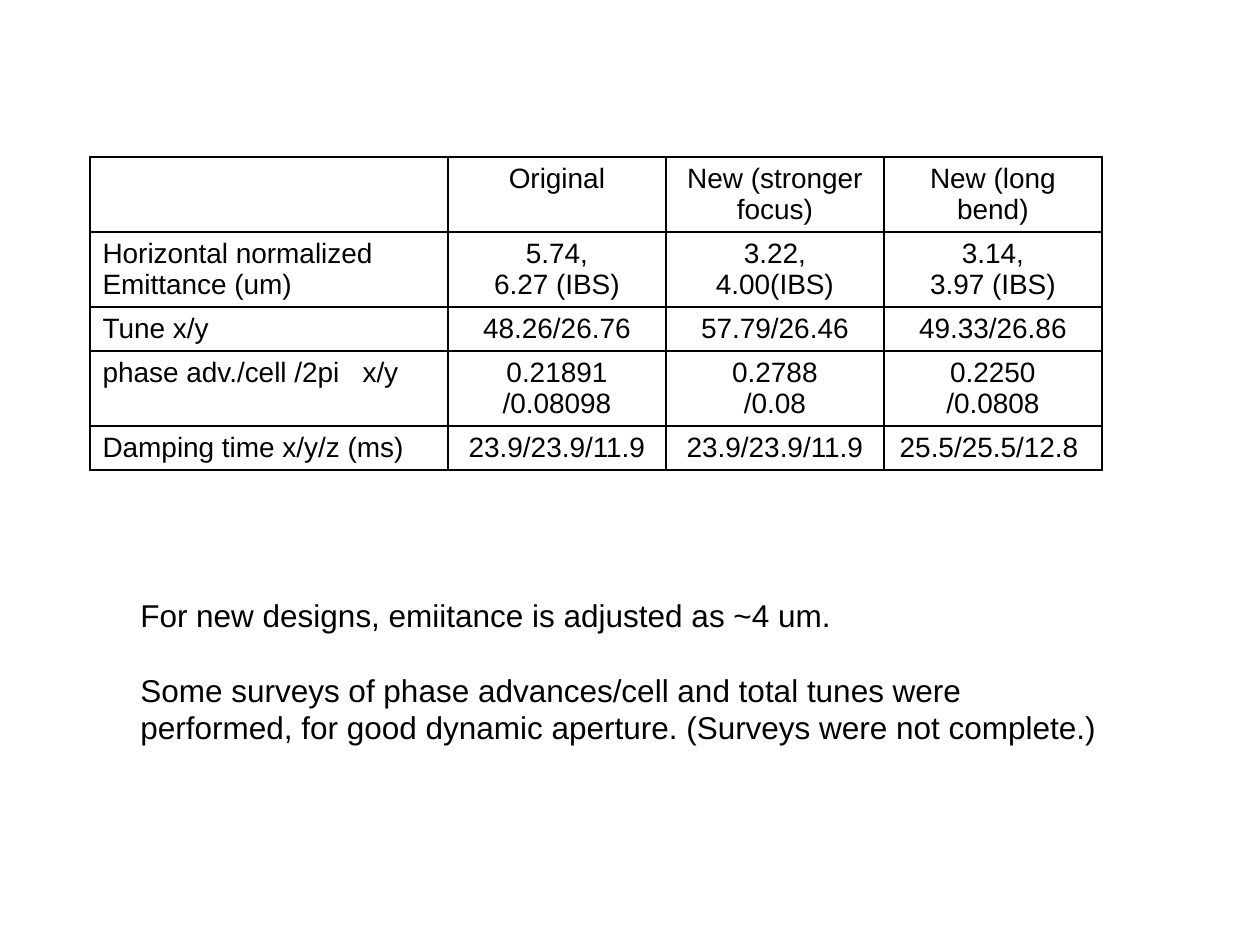
from dataclasses import dataclass

from lxml import etree
from pptx import Presentation
from pptx.dml.color import RGBColor
from pptx.enum.text import MSO_AUTO_SIZE, PP_ALIGN
from pptx.oxml.ns import qn
from pptx.util import Pt

LEFT, MID = PP_ALIGN.LEFT, PP_ALIGN.CENTER
GROW = MSO_AUTO_SIZE.SHAPE_TO_FIT_TEXT
PX = 914400 // 126  # EMU in one px


@dataclass(frozen=True)
class Theme:
    font: str = "Arial"
    ink: str = "000000"
    cell: int = 16
    note: int = 18
    gap: int = 21
    line: int = 1


@dataclass(frozen=True)
class Box:
    x: int
    y: int
    w: int
    h: int

    def emu(self) -> tuple[int, ...]:
        return tuple(n * PX for n in (self.x, self.y, self.w, self.h))


@dataclass(frozen=True)
class Row:
    h: int
    cells: tuple[str, ...]


THEME = Theme()
COLS = (358, 218, 218, 218)
ROWS = (
    Row(75, ("", "Original", "New (stronger focus)", "New (long bend)")),
    Row(75, ("Horizontal normalized Emittance (um)", "5.74,\n6.27 (IBS)",
             "3.22,\n4.00(IBS)", "3.14,\n3.97 (IBS)")),
    Row(44, ("Tune x/y", "48.26/26.76", "57.79/26.46", "49.33/26.86")),
    Row(75, ("phase adv./cell /2pi\tx/y", "0.21891\n/0.08098",
             "0.2788\n/0.08", "0.2250\n/0.0808")),
    Row(44, ("Damping time x/y/z (ms)", "23.9/23.9/11.9",
             "23.9/23.9/11.9", "25.5/25.5/12.8 ")),
)
GRID = Box(90, 157, sum(COLS), sum(row.h for row in ROWS))
TAB = 260  # where "x/y" starts, from the cell's text edge
NOTE = Box(128, 590, 995, 165)
NOTES = (
    "For new designs, emiitance is adjusted as ~4 um.",
    "Some surveys of phase advances/cell and total tunes were "
    "performed, for good dynamic aperture. (Surveys were not complete.)",
)


def write(frame, text: str, size: int, align=LEFT, gap: int = 0) -> None:
    """Fill a text frame, one paragraph a line."""
    frame.text = text
    for par in frame.paragraphs:
        par.alignment = align
        par.space_after = Pt(gap)
        if "\t" in par.text:
            tabs = etree.SubElement(par._p.get_or_add_pPr(), qn("a:tabLst"))
            etree.SubElement(tabs, qn("a:tab"), pos=str(TAB * PX), algn="l")
        par.font.name = THEME.font
        par.font.size = Pt(size)
        par.font.color.rgb = RGBColor.from_string(THEME.ink)


def rule(cell) -> None:
    """Draw a thin line on all four sides of a cell."""
    props = cell._tc.get_or_add_tcPr()
    for i, side in enumerate("LRTB"):
        line = etree.Element(qn(f"a:ln{side}"), w=str(Pt(THEME.line)))
        fill = etree.SubElement(line, qn("a:solidFill"))
        etree.SubElement(fill, qn("a:srgbClr"), val=THEME.ink)
        props.insert(i, line)


def draw_grid(slide) -> None:
    table = slide.shapes.add_table(len(ROWS), len(COLS), *GRID.emu()).table
    table.first_row = table.horz_banding = False
    for col, w in zip(table.columns, COLS):
        col.width = w * PX
    for r, row in enumerate(ROWS):
        table.rows[r].height = row.h * PX
        for c, text in enumerate(row.cells):
            cell = table.cell(r, c)
            write(cell.text_frame, text, THEME.cell, MID if c else LEFT)
            cell.fill.background()
            rule(cell)


def draw_note(slide) -> None:
    frame = slide.shapes.add_textbox(*NOTE.emu()).text_frame
    frame.word_wrap = True
    frame.auto_size = GROW
    write(frame, "\n".join(NOTES), THEME.note, gap=THEME.gap)
    frame.paragraphs[-1].space_after = Pt(0)


def main() -> None:
    deck = Presentation()
    deck.slide_width, deck.slide_height = 1260 * PX, 945 * PX
    slide = deck.slides.add_slide(deck.slide_layouts[6])
    # Table of ring designs
    draw_grid(slide)
    # Remarks below it
    draw_note(slide)
    deck.save("out.pptx")


if __name__ == "__main__":
    main()
